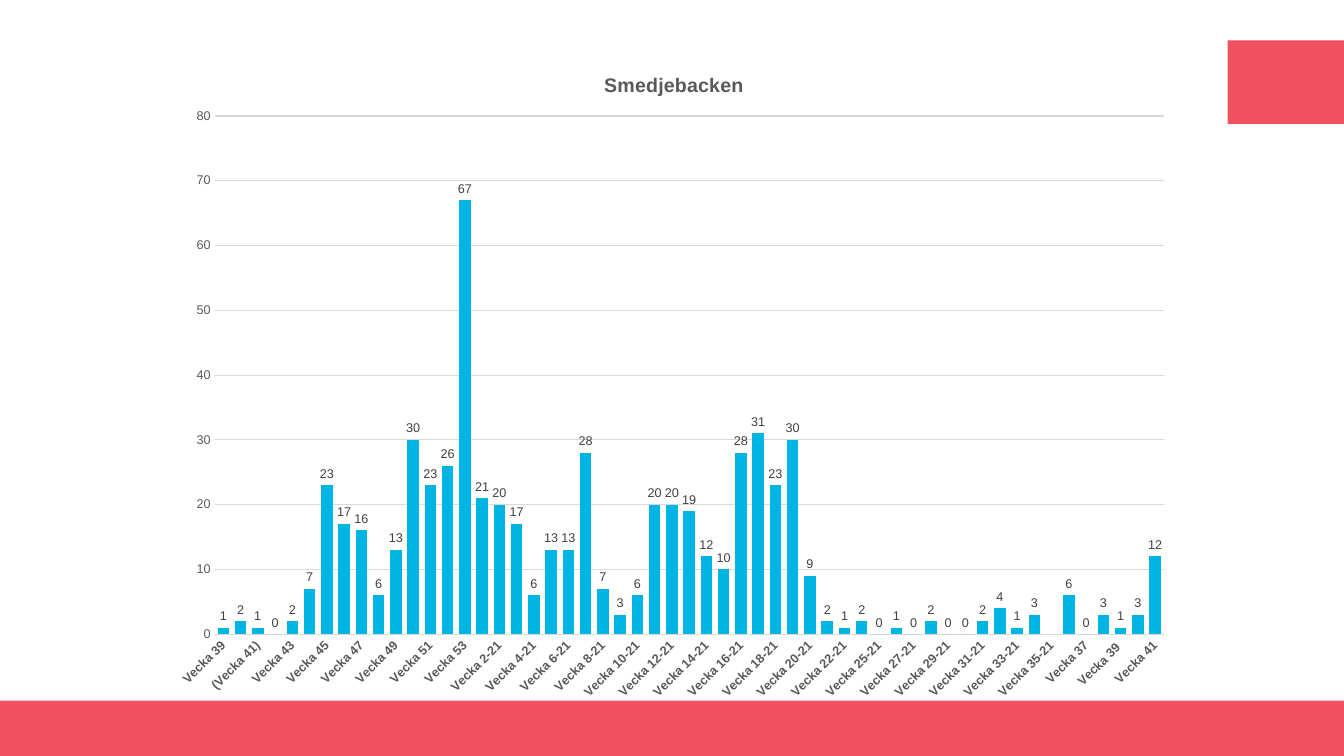
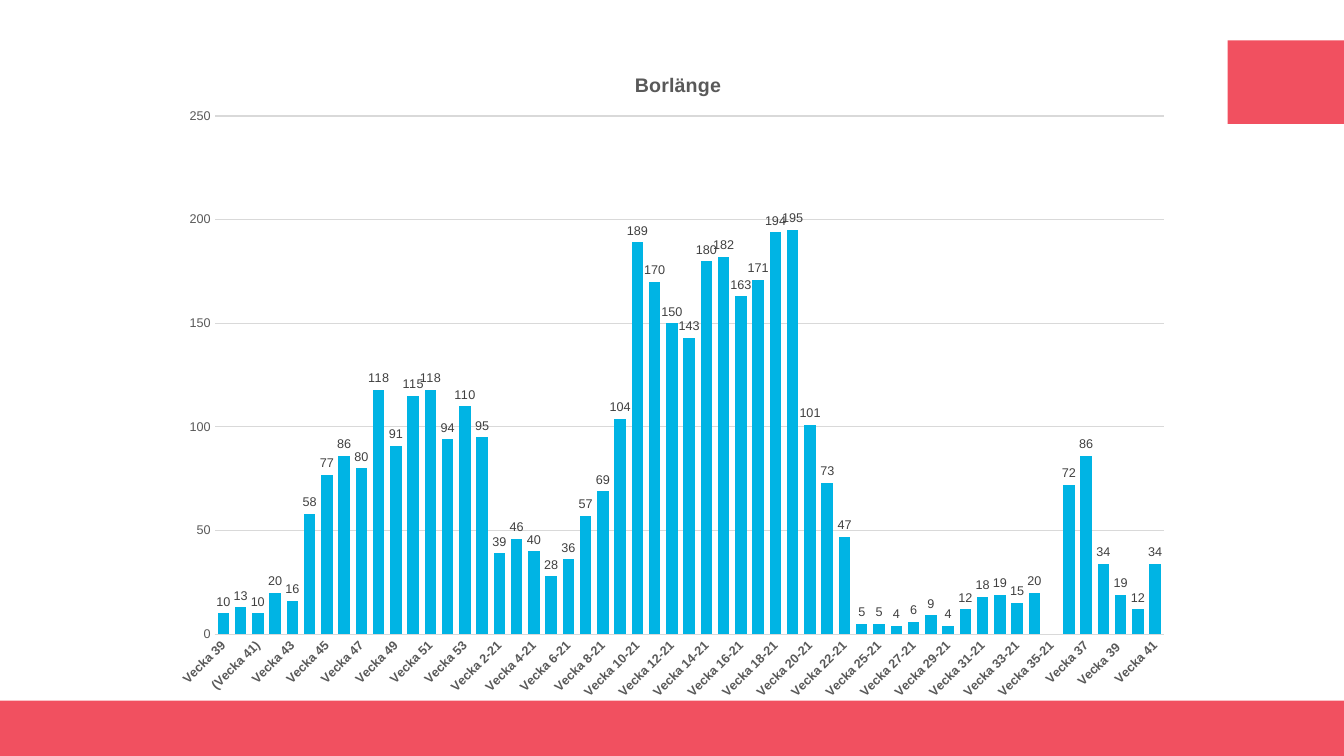
"""Build two slides with weekly column charts for Smedjebacken and Borlänge."""
from dataclasses import dataclass
from typing import Optional

import pptx
import pptx.chart.axis
import pptx.chart.chart
import pptx.chart.data
import pptx.dml.color
import pptx.dml.line
import pptx.enum.chart
import pptx.enum.shapes
import pptx.oxml
import pptx.oxml.ns
import pptx.shapes.autoshape
import pptx.slide
import pptx.text.text
import pptx.util

RGB = pptx.dml.color.RGBColor
RED = RGB(0xF1, 0x50, 0x60)
BLUE = RGB(0x00, 0xB4, 0xE4)
GREY = RGB(0x59, 0x59, 0x59)
DARK = RGB(0x40, 0x40, 0x40)
PALE = RGB(0xD9, 0xD9, 0xD9)
BLACK = RGB(0, 0, 0)
FONT = "Arial"

WIDE = pptx.util.Inches(13.33)
HIGH = pptx.util.Inches(7.5)
COLS, ROWS = 40, 22.5


@dataclass(frozen=True)
class Box:
    col: float
    row: float
    cols: float
    rows: float

    def spot(self) -> tuple[int, int, int, int]:
        across, down = WIDE / COLS, HIGH / ROWS
        return (round(self.col * across), round(self.row * down),
                round(self.cols * across), round(self.rows * down))


@dataclass(frozen=True)
class Town:
    name: str
    left: float
    top: int
    step: int
    cases: tuple[Optional[int], ...]


BANDS = (Box(0, 20.85, COLS, 1.65), Box(36.54, 1.2, 3.46, 2.49))
CHART = Box(4.74, 1.26, 30.54, 19.95)
WEEKS = (
    "Vecka 39", "Vecka 40", "(Vecka 41)",
    *(f"Vecka {week}" for week in range(42, 54)),
    *(f"Vecka {week}-21" for week in range(1, 37) if week != 23),
    "Vecka 37", "Vecka 38 ", "Vecka 39 ", "Vecka 40 ", "Vecka 41",
)
TOWNS = (
    Town("Smedjebacken", 0.43, 80, 10, (
        1, 2, 1, 0, 2, 7, 23, 17, 16, 6, 13, 30, 23, 26, 67,
        21, 20, 17, 6, 13, 13, 28, 7, 3, 6, 20, 20, 19, 12, 10,
        28, 31, 23, 30, 9, 2, 1, 2, 0, 1, 0, 2, 0, 0, 2, 4, 1, 3,
        None, 6, 0, 3, 1, 3, 12)),
    Town("Borlänge", 0.46, 250, 50, (
        10, 13, 10, 20, 16, 58, 77, 86, 80, 118, 91, 115, 118, 94, 110,
        95, 39, 46, 40, 28, 36, 57, 69, 104, 189, 170, 150, 143, 180, 182,
        163, 171, 194, 195, 101, 73, 47, 5, 5, 4, 6, 9, 4, 12, 18, 19, 15, 20,
        None, 72, 86, 34, 19, 12, 34)),
)


def style(font: pptx.text.text.Font, size: float, color: RGB, bold: bool = False) -> None:
    font.name = FONT
    font.size = pptx.util.Pt(size)
    font.bold = bold
    font.color.rgb = color


def write(frame: pptx.text.text.TextFrame, text: str, *, size: float,
          color: RGB, bold: bool = False) -> None:
    run = frame.paragraphs[0].add_run()
    run.text = text
    style(run.font, size, color, bold)


def rule(line: pptx.dml.line.LineFormat) -> None:
    line.color.rgb = PALE
    line.width = pptx.util.Pt(0.75)


def place(node, index: int, inner: bool = False, **shares: float) -> None:
    for old in node.xpath("./c:layout"):
        node.remove(old)
    target = '<c:layoutTarget val="inner"/>' if inner else ""
    modes = "".join(f'<c:{key}Mode val="edge"/>' for key in "xy")
    sizes = "".join(f'<c:{key} val="{val}"/>' for key, val in shares.items())
    node.insert(index, pptx.oxml.parse_xml(
        f'<c:layout {pptx.oxml.ns.nsdecls("c")}><c:manualLayout>'
        f"{target}{modes}{sizes}</c:manualLayout></c:layout>"))


def add_bands(slide: pptx.slide.Slide) -> None:
    tree = slide.slide_layout.shapes.element
    for index, box in enumerate(BANDS):
        band = slide.shapes.add_shape(
            pptx.enum.shapes.MSO_SHAPE.RECTANGLE, *box.spot())
        band.shadow.inherit = False
        band.fill.solid()
        band.fill.fore_color.rgb = RED
        band.line.fill.background()
        band.element.xpath("./p:nvSpPr/p:cNvPr")[0].set("id", str(100 + index))
        tree.insert(2 + index, band.element)


def set_axes(chart: pptx.chart.chart.Chart, town: Town) -> None:
    weeks, count = chart.category_axis, chart.value_axis
    for axis in (weeks, count):
        axis.major_tick_mark = pptx.enum.chart.XL_TICK_MARK.NONE
        axis.minor_tick_mark = pptx.enum.chart.XL_TICK_MARK.NONE
        style(axis.tick_labels.font, 9, GREY, axis is weeks)
    rule(weeks.format.line)
    count.format.line.fill.background()
    count.has_major_gridlines = True
    rule(count.major_gridlines.format.line)
    count.minimum_scale, count.maximum_scale = 0, town.top
    count.major_unit = town.step
    body = chart.element.xpath("//c:catAx/c:txPr/a:bodyPr")[0]
    body.set("rot", "-2700000")
    body.set("vert", "horz")
    skip = pptx.oxml.parse_xml(
        f'<c:tickLblSkip {pptx.oxml.ns.nsdecls("c")} val="2"/>')
    chart.element.xpath("//c:catAx/c:noMultiLvlLbl")[0].addprevious(skip)


def set_bars(chart: pptx.chart.chart.Chart) -> None:
    plot = chart.plots[0]
    plot.gap_width, plot.overlap = 50, -27
    plot.vary_by_categories = False
    bars = plot.series[0]
    bars.invert_if_negative = False
    bars.format.fill.solid()
    bars.format.fill.fore_color.rgb = BLUE
    labels = bars.data_labels
    labels.show_value = True
    labels.position = pptx.enum.chart.XL_LABEL_POSITION.OUTSIDE_END
    style(labels.font, 9, DARK)


def add_chart(slide: pptx.slide.Slide, town: Town) -> None:
    data = pptx.chart.data.CategoryChartData()
    data.categories = WEEKS
    data.add_series("Series 1", town.cases)
    chart = slide.shapes.add_chart(
        pptx.enum.chart.XL_CHART_TYPE.COLUMN_CLUSTERED, *CHART.spot(), data).chart
    style(chart.font, 10, BLACK)
    chart.has_legend = False
    chart.has_title = True
    write(chart.chart_title.text_frame, town.name, size=14, color=GREY, bold=True)
    chart.chart_title.include_in_layout = False
    set_axes(chart, town)
    set_bars(chart)
    place(chart.element.xpath("./c:chart/c:title")[0], 1, x=town.left, y=0.04)
    place(chart.element.xpath("./c:chart/c:plotArea")[0], 0, True,
          x=0.054, y=0.11, w=0.925, h=0.773)


def main() -> None:
    deck = pptx.Presentation()
    deck.slide_width, deck.slide_height = WIDE, HIGH
    blank = deck.slide_layouts.get_by_name("Blank")
    for index, town in enumerate(TOWNS):
        slide = deck.slides.add_slide(blank)
        if index == 0:
            add_bands(slide)
        add_chart(slide, town)
    deck.save("out.pptx")


if __name__ == "__main__":
    main()
